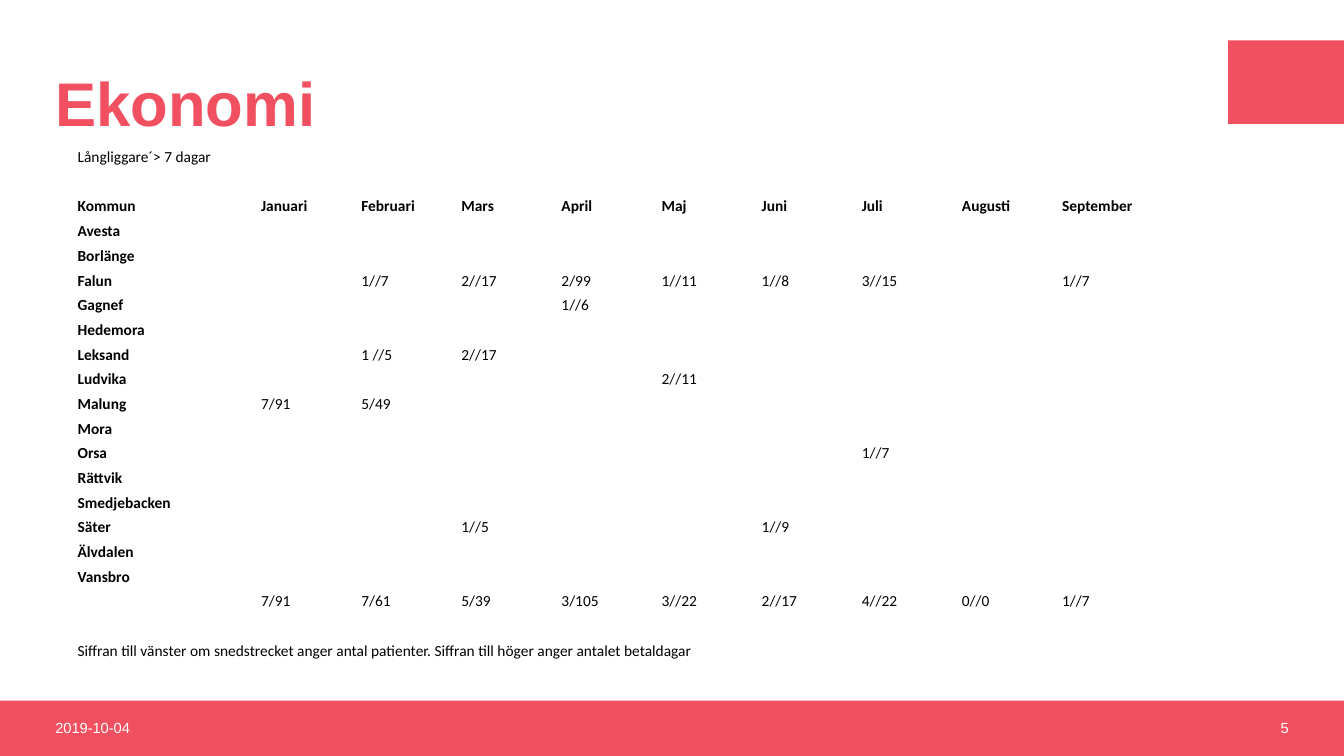
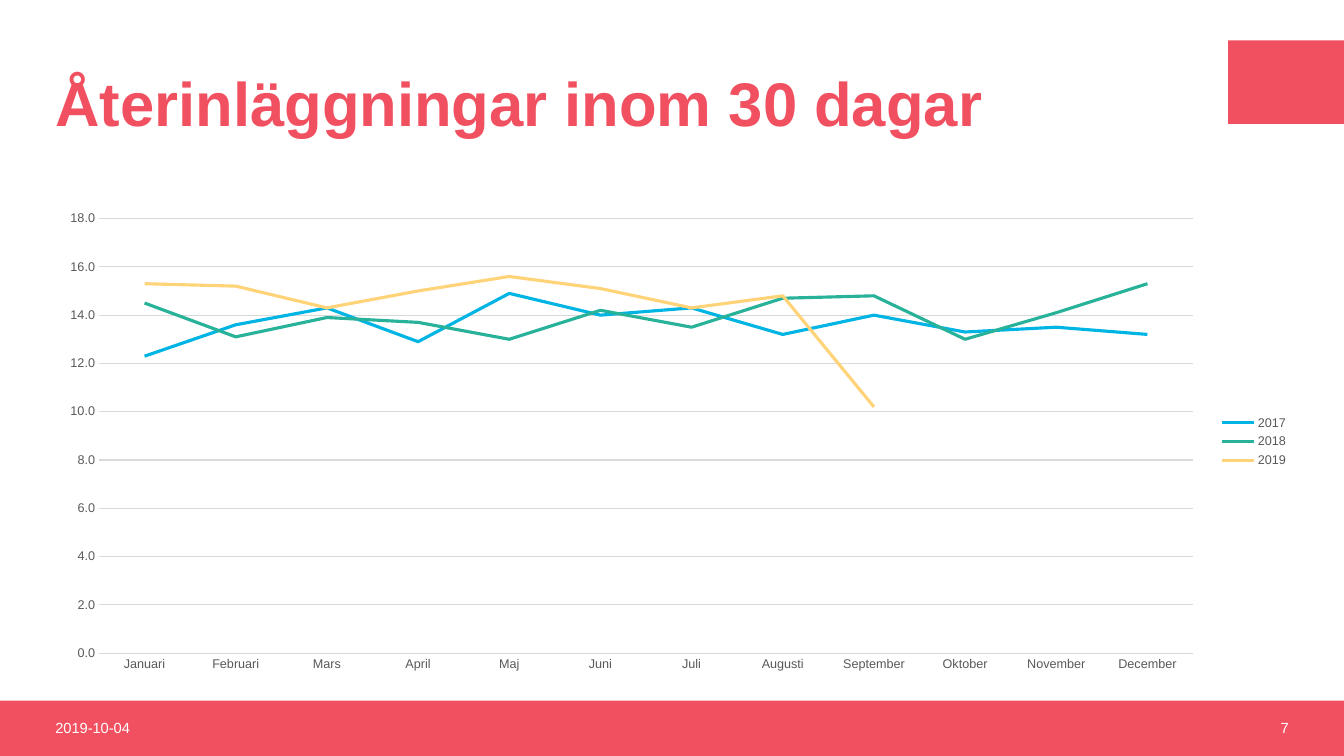
from pptx import Presentation
from pptx.chart.data import CategoryChartData as Data
from pptx.dml.color import RGBColor as RGB
from pptx.enum.chart import XL_CHART_TYPE as Kind, XL_LEGEND_POSITION as Legend
from pptx.enum.chart import XL_MARKER_STYLE as Marker, XL_TICK_MARK as Tick
from pptx.enum.shapes import MSO_SHAPE as Shape
from pptx.enum.text import MSO_ANCHOR as Anchor, PP_ALIGN as Align
from pptx.util import Inches, Pt

RED = RGB(0xF1, 0x50, 0x60)
WHITE = RGB(0xFF, 0xFF, 0xFF)
BLACK = RGB(0, 0, 0)
GREY = RGB(0x59, 0x59, 0x59)
RULE = RGB(0xD9, 0xD9, 0xD9)
BLUE = RGB(0x00, 0xB4, 0xE4)
GREEN = RGB(0x28, 0xB2, 0x9A)
YELLOW = RGB(0xFF, 0xD3, 0x78)

WIDE, HIGH = Inches(13.33), Inches(7.5)

# Boxes: left, top, width, height in percent of the slide
BAND = (0, 92.67, 100, 7.33)
BLOCK = (91.38, 5.33, 8.62, 11.07)
TITLE = (3.38, 5.33, 87.1, 17.6)
DATE = (3.38, 92.67, 22.5, 7.2)
PAGE = (74.12, 92.67, 22.5, 7.2)
TABLE = (5.7, 18.8, 82.45, 68.67)
CHART = (3.38, 26.67, 93.24, 63.47)

# Text formats
HEAD = dict(name="Arial", size=Pt(44), bold=True, color=RED)
FOOT = dict(name="Arial", size=Pt(10.5), color=WHITE)
CELL = dict(name="Calibri", size=Pt(11), bold=False, color=BLACK)
LABEL = dict(name="Arial", size=Pt(9), color=GREY)

MONTHS = ["Januari", "Februari", "Mars", "April", "Maj", "Juni", "Juli",
          "Augusti", "September", "Oktober", "November", "December"]
SHOWN = MONTHS[:9]

STAYS = {
    "Avesta": {},
    "Borlänge": {},
    "Falun": {"Februari": "1//7", "Mars": "2//17", "April": "2/99",
              "Maj": "1//11", "Juni": "1//8", "Juli": "3//15",
              "September": "1//7"},
    "Gagnef": {"April": "1//6"},
    "Hedemora": {},
    "Leksand": {"Februari": "1 //5", "Mars": "2//17"},
    "Ludvika": {"Maj": "2//11"},
    "Malung": {"Januari": "7/91", "Februari": "5/49"},
    "Mora": {},
    "Orsa": {"Juli": "1//7"},
    "Rättvik": {},
    "Smedjebacken": {},
    "Säter": {"Mars": "1//5", "Juni": "1//9"},
    "Älvdalen": {},
    "Vansbro": {},
}
TOTALS = ["7/91", "7/61", "5/39", "3/105", "3//22", "2//17", "4//22",
          "0//0", "1//7"]
TOPIC = "Långliggare´> 7 dagar"
NOTE = ("Siffran till vänster om snedstrecket anger antal patienter. "
        "Siffran till höger anger antalet betaldagar")

RATES = {
    "2017": (BLUE, [12.3, 13.6, 14.3, 12.9, 14.9, 14, 14.3, 13.2, 14,
                    13.3, 13.5, 13.2]),
    "2018": (GREEN, [14.5, 13.1, 13.9, 13.7, 13, 14.2, 13.5, 14.7, 14.8,
                     13, 14.1, 15.3]),
    "2019": (YELLOW, [15.3, 15.2, 14.3, 15, 15.6, 15.1, 14.3, 14.8, 10.2,
                      None, None, None]),
}


def place(box):
    return [int(side * part / 100)
            for side, part in zip((WIDE, HIGH, WIDE, HIGH), box)]


def style(font, form):
    for key, value in form.items():
        if key == "color":
            font.color.rgb = value
        else:
            setattr(font, key, value)


def draw_rect(slide, box):
    rect = slide.shapes.add_shape(Shape.RECTANGLE, *place(box))
    rect.shadow.inherit = False
    rect.fill.solid()
    rect.fill.fore_color.rgb = RED
    rect.line.fill.background()


def draw_text(slide, box, text, form, align=Align.LEFT, space=1.0):
    frame = slide.shapes.add_textbox(*place(box)).text_frame
    frame.word_wrap = True
    frame.vertical_anchor = Anchor.MIDDLE
    para = frame.paragraphs[0]
    para.alignment, para.line_spacing = align, space
    run = para.add_run()
    run.text = text
    style(run.font, form)


def add_page(deck, title, number):
    slide = deck.slides.add_slide(deck.slide_layouts[6])
    for box in (BAND, BLOCK):
        draw_rect(slide, box)
    draw_text(slide, TITLE, title, HEAD, space=0.9)
    draw_text(slide, DATE, "2019-10-04", FOOT)
    draw_text(slide, PAGE, number, FOOT, Align.RIGHT)
    return slide


def fill_cell(cell, text, bold):
    cell.fill.background()
    cell.vertical_anchor = Anchor.BOTTOM
    cell.margin_left = cell.margin_right = cell.margin_top = Inches(0.01)
    cell.margin_bottom = 0
    para = cell.text_frame.paragraphs[0]
    if text:
        run = para.add_run()
        run.text = text
        style(run.font, CELL | {"bold": bold})
    else:
        # Keep empty rows as low as the filled ones
        para._p.get_or_add_endParaRPr().set("sz", "1100")


def draw_table(slide, box):
    blank = [""] * len(SHOWN)
    rows = [[TOPIC] + blank, [""] + blank, ["Kommun"] + SHOWN]
    rows += [[town] + [stay.get(month, "") for month in SHOWN]
             for town, stay in STAYS.items()]
    rows += [[""] + TOTALS, [""] + blank, [NOTE] + blank]
    left, top, width, height = place(box)
    grid = slide.shapes.add_table(len(rows), len(rows[0]),
                                  left, top, width, height).table
    grid.first_row = grid.horz_banding = False

    # Column shares: town, months, last month
    parts = [11] + [6] * 8 + [7.4]
    for col, part in zip(grid.columns, parts):
        col.width = int(width * part / sum(parts))
    for row in grid.rows:
        row.height = height // len(rows)

    last = len(rows) - 1
    for r, row in enumerate(rows):
        for c, text in enumerate(row):
            bold = r == 2 or (c == 0 and 2 < r < last)
            fill_cell(grid.cell(r, c), text, bold)
    grid.cell(0, 0).merge(grid.cell(0, 1))
    grid.cell(last, 0).merge(grid.cell(last, 8))


def draw_chart(slide, box):
    data = Data(number_format="0.0")
    data.categories = MONTHS
    for year, (_, rates) in RATES.items():
        data.add_series(year, rates)
    chart = slide.shapes.add_chart(Kind.LINE, *place(box), data).chart
    chart.has_title = False
    style(chart.font, LABEL | {"size": Pt(10), "color": BLACK})

    # Lines
    plot = chart.plots[0]
    plot.vary_by_categories = False
    for line, (color, _) in zip(plot.series, RATES.values()):
        line.smooth = False
        line.marker.style = Marker.NONE
        line.format.line.color.rgb = color
        line.format.line.width = Pt(2.25)

    # Axes
    months, rates = chart.category_axis, chart.value_axis
    for axis in (months, rates):
        axis.major_tick_mark = axis.minor_tick_mark = Tick.NONE
        style(axis.tick_labels.font, LABEL)
    rates.minimum_scale, rates.maximum_scale, rates.major_unit = 0, 18, 2
    rates.tick_labels.number_format = "0.0"
    rates.tick_labels.number_format_is_linked = False
    rates.format.line.fill.background()
    for rule in (months.format.line, rates.major_gridlines.format.line):
        rule.color.rgb = RULE
        rule.width = Pt(0.75)

    # Legend
    chart.has_legend = True
    chart.legend.position = Legend.RIGHT
    chart.legend.include_in_layout = False
    style(chart.legend.font, LABEL)


def main():
    deck = Presentation()
    deck.slide_width, deck.slide_height = WIDE, HIGH
    draw_table(add_page(deck, "Ekonomi", "5"), TABLE)
    draw_chart(add_page(deck, "Återinläggningar inom 30 dagar", "7"), CHART)
    deck.save("out.pptx")


if __name__ == "__main__":
    main()
